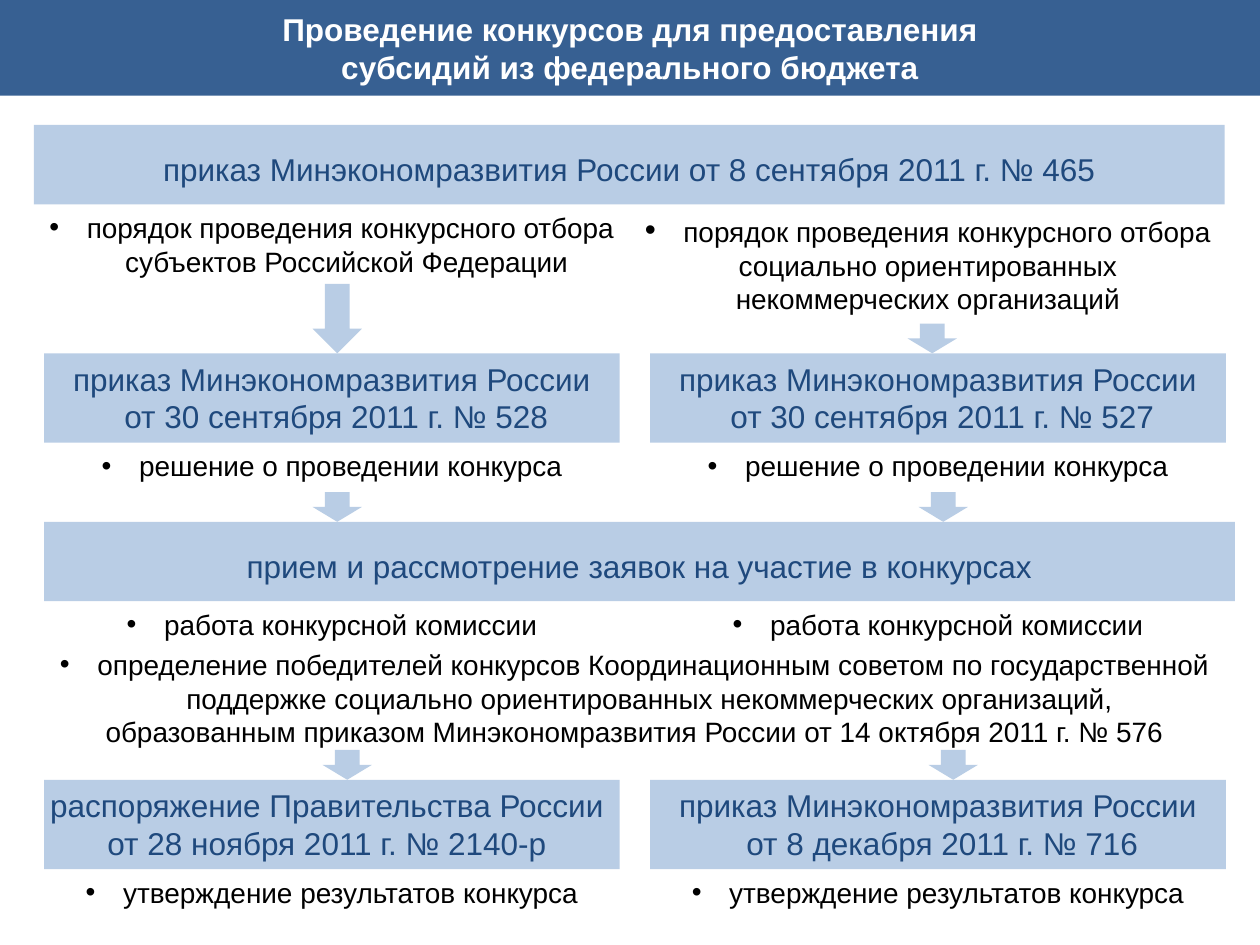
from lxml import etree
from pptx import Presentation
from pptx import util as u
from pptx.dml.color import RGBColor
from pptx.enum import shapes, text
from pptx.oxml import ns

HEADER_BLUE = RGBColor(0x37, 0x60, 0x92)
PALE_BLUE = RGBColor(0xB9, 0xCD, 0xE5)
DARK_BLUE = RGBColor(0x1F, 0x49, 0x7D)
WHITE = RGBColor(0xFF, 0xFF, 0xFF)
BLACK = RGBColor(0, 0, 0)

# Grid, in points
SLIDE_WIDTH, SLIDE_HEIGHT = 720, 540
LEFT, RIGHT, COLUMN_WIDTH = 25.2, 371.5, 329
OUTER_LEFT, WIDE_WIDTH, HALF_WIDTH = 19.4, 680.4, 340.5
WIDE_HEIGHT, BOX_HEIGHT, NOTE_HEIGHT = 45.4, 51, 26.6
ARROW_WIDTH, ARROW_HEIGHT = 28.2, 17
BULLET_INDENT = 17

BOX_FONT = {"name": "Arial", "size": u.Pt(18)}
NOTE_FONT = {"name": "Arial", "size": u.Pt(16)}


def place(left, top, width, height):
    return [u.Pt(value) for value in (left, top, width, height)]


def add_run(paragraph, wording, color, font):
    run = paragraph.add_run()
    run.text = wording
    for name, value in font.items():
        setattr(run.font, name, value)
    run.font.color.rgb = color


def add_lines(frame, lines, color, font):
    """Write one centred paragraph per line."""
    frame.word_wrap = True
    for index, line in enumerate(lines):
        paragraph = frame.add_paragraph() if index else frame.paragraphs[0]
        paragraph.alignment = text.PP_ALIGN.CENTER
        add_run(paragraph, line, color, font)


def add_bullet(paragraph):
    properties = paragraph._p.get_or_add_pPr()
    properties.set("marL", str(u.Pt(BULLET_INDENT)))
    properties.set("indent", str(-u.Pt(BULLET_INDENT)))
    etree.SubElement(properties, ns.qn("a:buFont"), typeface="Arial")
    etree.SubElement(properties, ns.qn("a:buChar"), char="•")


def add_filled(slide, preset, position, color):
    shape = slide.shapes.add_shape(preset, *place(*position))
    shape.shadow.inherit = False
    shape.fill.solid()
    shape.fill.fore_color.rgb = color
    shape.line.fill.background()
    return shape


def add_box(slide, position, lines):
    box = add_filled(slide, shapes.MSO_SHAPE.RECTANGLE, position, PALE_BLUE)
    frame = box.text_frame
    frame.vertical_anchor = text.MSO_ANCHOR.TOP
    add_lines(frame, lines, DARK_BLUE, BOX_FONT)
    return frame


def add_wide_box(slide, left, top, line):
    frame = add_box(slide, (left, top, WIDE_WIDTH, WIDE_HEIGHT), [line])
    frame.paragraphs[0].line_spacing = 1.5


def add_note(slide, position, lines):
    """Add a text box whose first paragraph carries a bullet."""
    frame = slide.shapes.add_textbox(*place(*position)).text_frame
    add_lines(frame, lines, BLACK, NOTE_FONT)
    frame.auto_size = text.MSO_AUTO_SIZE.SHAPE_TO_FIT_TEXT
    add_bullet(frame.paragraphs[0])
    return frame


def add_note_pair(slide, top, line):
    for left in (LEFT, RIGHT):
        add_note(slide, (left, top, COLUMN_WIDTH, NOTE_HEIGHT), [line])


def add_arrow(slide, left, top, height=ARROW_HEIGHT):
    add_filled(slide, shapes.MSO_SHAPE.DOWN_ARROW,
               (left, top, ARROW_WIDTH, height), PALE_BLUE)


def main():
    presentation = Presentation()
    presentation.slide_width = u.Pt(SLIDE_WIDTH)
    presentation.slide_height = u.Pt(SLIDE_HEIGHT)
    slide = presentation.slides.add_slide(presentation.slide_layouts[6])

    # Title band
    band = add_filled(slide, shapes.MSO_SHAPE.RECTANGLE,
                      (0, 0, SLIDE_WIDTH, 54.7), HEADER_BLUE)
    band.text_frame.vertical_anchor = text.MSO_ANCHOR.MIDDLE
    add_lines(band.text_frame,
              ["Проведение конкурсов для предоставления",
               "субсидий из федерального бюджета"],
              WHITE, {**BOX_FONT, "bold": True})

    # Selection procedures
    add_wide_box(slide, OUTER_LEFT, 71.4,
                 "приказ Минэкономразвития России от 8 сентября 2011 г. № 465")
    add_note(slide, (OUTER_LEFT, 116.8, HALF_WIDTH, 46),
             [" порядок проведения конкурсного отбора "
              "субъектов Российской Федерации"])
    frame = add_note(slide, (SLIDE_WIDTH / 2, 116.8, HALF_WIDTH, 67.8),
                     [" ", "социально ориентированных "
                      "некоммерческих организаций"])
    opening = frame.paragraphs[0]
    opening.runs[0].font.size = BOX_FONT["size"]
    add_run(opening, "порядок проведения конкурсного отбора", BLACK, NOTE_FONT)
    add_arrow(slide, 178.6, 162.2, 39.7)
    add_arrow(slide, 518.6, 184.9)

    # Decisions to hold the competitions
    for left, number in ((LEFT, 528), (RIGHT, 527)):
        add_box(slide, (left, 202, COLUMN_WIDTH, BOX_HEIGHT),
                ["приказ Минэкономразвития России",
                 f" от 30 сентября 2011 г. № {number}"])
    add_note_pair(slide, 253, " решение о проведении конкурса")

    # Applications and choice of winners
    add_wide_box(slide, LEFT, 298.2,
                 "прием и рассмотрение заявок на участие в конкурсах")
    add_note_pair(slide, 343.6, " работа конкурсной комиссии")
    add_note(slide, (LEFT, 366.5, 674.9, 65.5),
             [" определение победителей конкурсов Координационным советом "
              "по государственной поддержке социально ориентированных "
              "некоммерческих организаций,",
              "образованным приказом Минэкономразвития России "
              "от 14 октября 2011 г. № 576"])

    # Arrows into the two lower stages
    for left, top in ((178.6, 281.2), (184.3, 428.6)):
        for offset in (0, RIGHT - LEFT):
            add_arrow(slide, left + offset, top)

    # Approval of the results
    frame = add_box(slide, (LEFT, 445.7, COLUMN_WIDTH, BOX_HEIGHT),
                    ["распоряжение Правительства России",
                     "от 28 ноября 2011 г. № 2140-р"])
    frame.margin_left = u.Pt(1.4)
    add_box(slide, (RIGHT, 445.7, COLUMN_WIDTH, BOX_HEIGHT),
            ["приказ Минэкономразвития России", " от 8 декабря 2011 г. № 716"])
    add_note_pair(slide, 496.8, " утверждение результатов конкурса")

    presentation.save("out.pptx")


if __name__ == "__main__":
    main()
